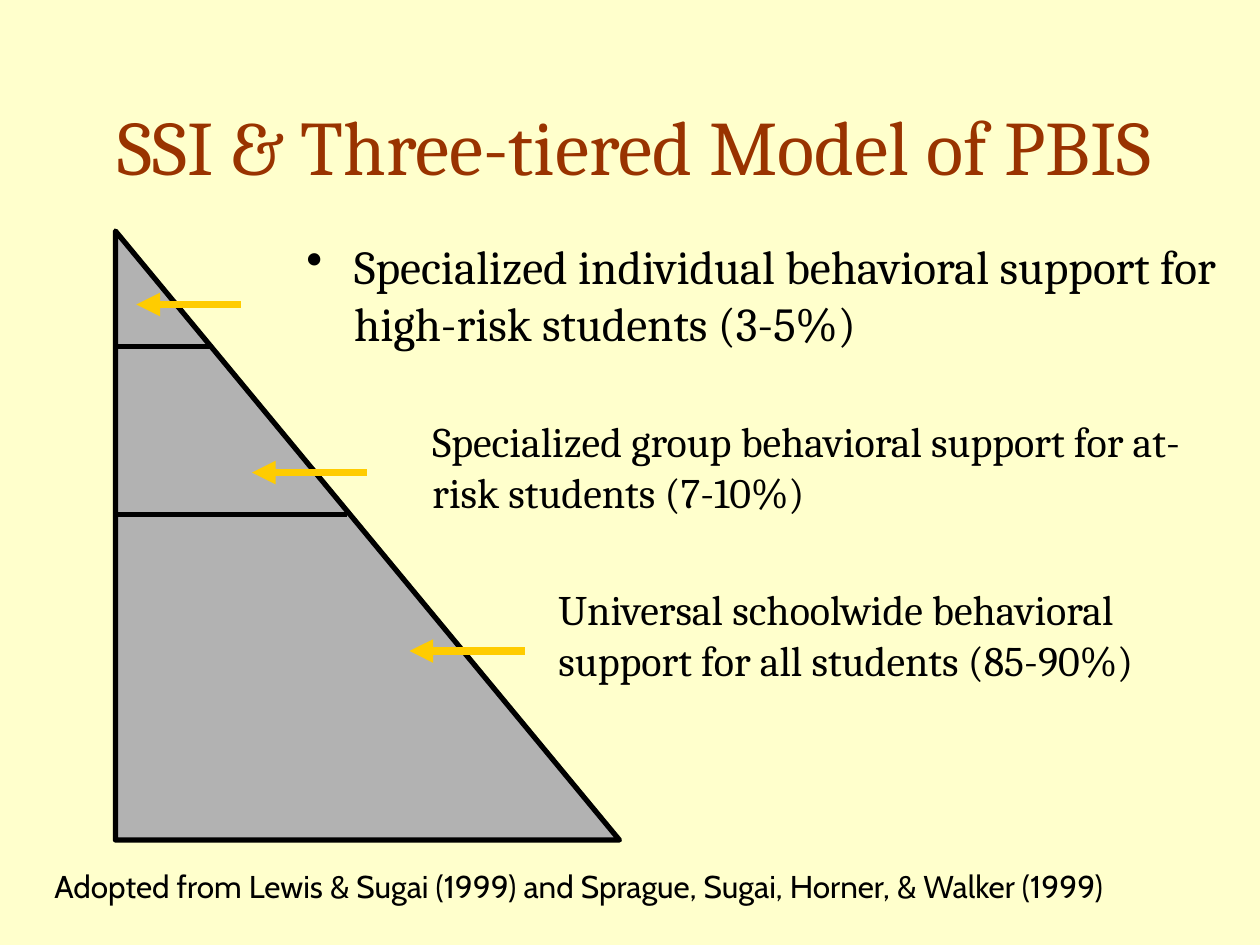
from pptx import Presentation, util as u
from pptx.dml.color import RGBColor
from pptx.enum import shapes, text
from lxml import etree
from pptx.oxml.ns import qn

deck = Presentation()
deck.slide_width, deck.slide_height = u.Inches(10), u.Inches(7.5)
slide = deck.slides.add_slide(deck.slide_layouts[6])
col = deck.slide_width / 120
row = deck.slide_height / 90


def paint(fmt, tone):
    if hasattr(fmt, "solid"):
        fmt.solid()
        fmt = fmt.fore_color
    fmt.rgb = RGBColor.from_string(tone)


def rule(left, right, y, tone, width):
    line = slide.shapes.add_connector(
        shapes.MSO_CONNECTOR.STRAIGHT,
        *(int(n) for n in (left * col, y * row, right * col, y * row)))
    paint(line.line.fill, tone)
    line.line.width = u.Pt(width)
    etree.SubElement(line._element.spPr, qn("a:effectLst"))
    return line


paint(slide.background.fill, "FFFFCC")

wedge = slide.shapes.add_shape(
    shapes.MSO_SHAPE.RIGHT_TRIANGLE,
    int(11 * col), int(22 * row), int(48 * col), int(58 * row))
wedge.shadow.inherit = False
paint(wedge.fill, "B2B2B2")
paint(wedge.line.fill, "000000")
wedge.line.width = u.Pt(3)

for right, y in ((20, 33), (33, 49)):
    rule(11, right, y, "000000", 3)

for left, right, y in ((13, 23, 29), (24, 35, 45), (39, 50, 62)):
    arrow = rule(left, right, y, "FFCC00", 4.5)
    etree.SubElement(arrow.line._get_or_add_ln(), qn("a:headEnd"), type="triangle")

top, mid = text.MSO_ANCHOR.TOP, text.MSO_ANCHOR.MIDDLE
start, center = text.PP_ALIGN.LEFT, text.PP_ALIGN.CENTER
notes = (
    ("SSI & Three-tiered Model of PBIS",
     (7, 6.25, 107, 15), "Cambria", 44, "993300", mid, center, 0),
    ("Specialized individual behavioral support for high-risk students (3-5%)",
     (28, 22, 89, 12), "Cambria", 27, "000000", top, start, 5.4),
    ("Adopted from Lewis & Sugai (1999) and Sprague, Sugai, Horner, & Walker (1999)",
     (4, 82, 113, 4.8), "Cabin", 18, "000000", top, start, 9),
    ("Specialized group behavioral support for at-risk students (7-10%)",
     (40, 39, 77, 12), "Cambria", 24, "000000", top, start, 0),
    ("Universal schoolwide behavioral support for all students (85-90%)",
     (52, 55, 68, 17), "Cambria", 24, "000000", top, start, 0),
)
for words, (x, y, w, h), face, size, tone, anchor, align, gap in notes:
    box = slide.shapes.add_textbox(
        int(x * col), int(y * row), int(w * col), int(h * row))
    frame = box.text_frame
    para = frame.paragraphs[0]
    run = para.add_run()
    run.text = words
    paint(run.font.color, tone)
    for part, look in (
        (frame, {"word_wrap": True, "vertical_anchor": anchor}),
        (para, {"alignment": align, "space_before": u.Pt(gap)}),
        (run.font, {"name": face, "size": u.Pt(size)}),
    ):
        for key, value in look.items():
            setattr(part, key, value)
    if size == 27:
        props = para._p.get_or_add_pPr()
        props.set("marL", str(u.Inches(0.38)))
        props.set("indent", str(u.Inches(-0.38)))
        etree.SubElement(props, qn("a:buChar"), char="•")

deck.save("out.pptx")
